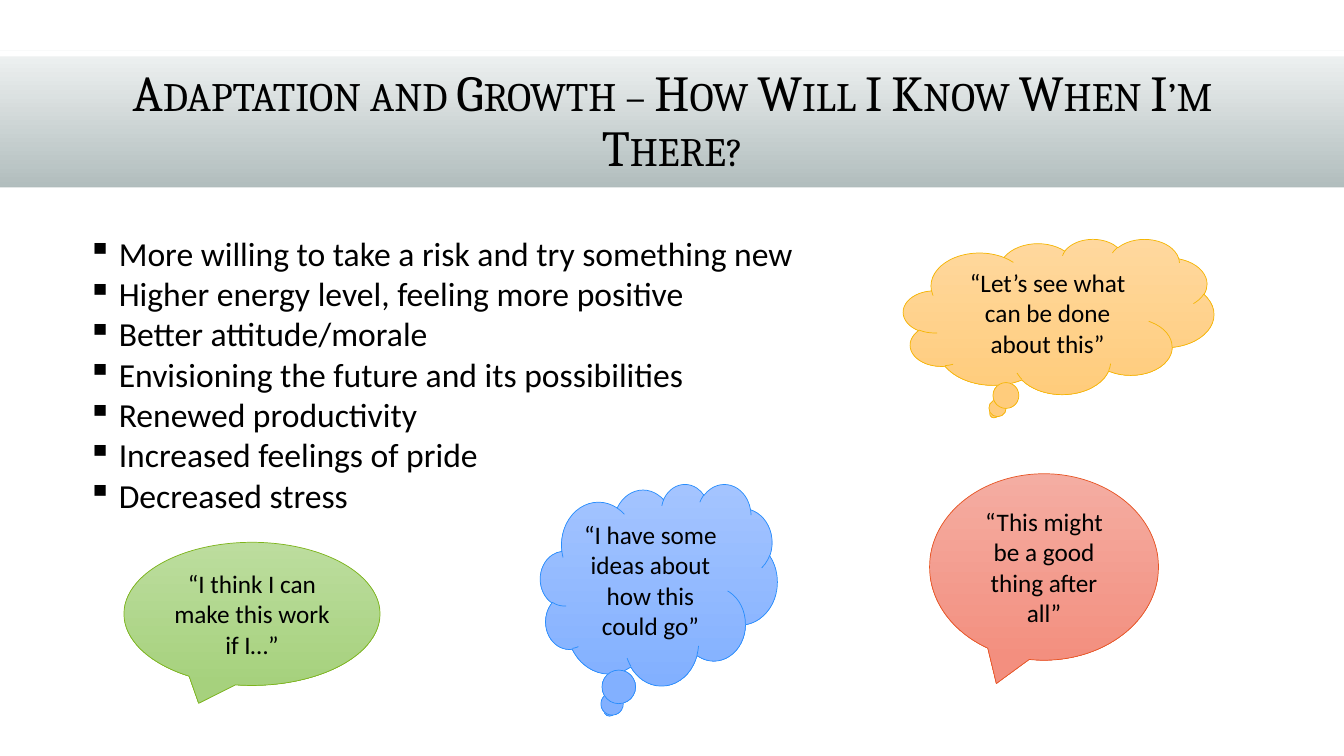
"""Build the slide on recognising adaptation and growth."""
from lxml import etree
from pptx import Presentation
from pptx.dml import color
from pptx.enum import shapes, text
from pptx.oxml import ns
from pptx import util as u

BLACK = "000000"
WHITE = "FFFFFF"
BAND_COLORS = ("EFF2F2", "B0BCBC")
TITLE = "Adaptation and Growth – How Will I Know When I’m There?"
SIGNS = (
    "More willing to take a risk and try something new",
    "Higher energy level, feeling more positive",
    "Better attitude/morale",
    "Envisioning the future and its possibilities",
    "Renewed productivity",
    "Increased feelings of pride",
    "Decreased stress",
)
SPEECH = shapes.MSO_SHAPE.OVAL_CALLOUT
THOUGHT = shapes.MSO_SHAPE.CLOUD_CALLOUT
CALLOUTS = (
    (SPEECH, (1.23, 5.38, 2.54, 1.42), ("BCDD9E", "A6D17D"), "7DB41B",
     "“I think I can make this work if I…”"),
    (THOUGHT, (8.96, 2.37, 3.08, 1.54), ("FFD89E", "FFCC7C"), "F5B605",
     "“Let’s see what can be done about this”"),
    (SPEECH, (9.22, 4.7, 2.27, 1.85), ("F4ADA2", "F38F7F"), "E75524",
     "“This might be a good thing after all”"),
    (THOUGHT, (5.36, 4.8, 2.35, 2), ("A4C4FF", "82B0FF"), "288DFC",
     "“I have some ideas about how this could go”"),
)


def rgb(value):
    """Return the colour for a hex string."""
    return color.RGBColor.from_string(value)


def inches(box):
    """Convert left, top, width and height to lengths."""
    return [u.Inches(value) for value in box]


def add_run(paragraph, words, size, font_name="Calibri"):
    """Add one black run to a paragraph and return it."""
    run = paragraph.add_run()
    run.text = words
    run.font.size = u.Pt(size)
    run.font.name = font_name
    run.font.color.rgb = rgb(BLACK)
    return run


def fill_gradient(shape, colors):
    """Fill a shape with a gradient running from top to bottom."""
    shape.fill.gradient()
    shape.fill.gradient_angle = 270
    for position, (stop, value) in enumerate(zip(shape.fill.gradient_stops, colors)):
        stop.position = position
        stop.color.rgb = rgb(value)


def add_shape(slide, kind, box):
    """Add a preset shape without a shadow."""
    shape = slide.shapes.add_shape(kind, *inches(box))
    shape.shadow.inherit = False
    return shape


def add_title_band(slide):
    """Add the shaded band with a white strip on its two edges."""
    band = add_shape(slide, shapes.MSO_SHAPE.RECTANGLE, (0, 0.5, 13.33, 1.39))
    fill_gradient(band, BAND_COLORS)
    band.line.fill.background()
    for top in (1.86, 0.5):
        strip = add_shape(slide, shapes.MSO_SHAPE.RECTANGLE, (0, top, 13.33, 0.06))
        strip.fill.solid()
        strip.fill.fore_color.rgb = rgb(WHITE)
        strip.line.fill.background()


def format_title(slide):
    """Place the title in small capitals in front of the band."""
    title = slide.shapes.title
    title.left, title.top, title.width, title.height = inches((1.17, 0.61, 11, 1.2))
    slide.shapes._spTree.append(title._element)
    frame = title.text_frame
    frame.auto_size = text.MSO_AUTO_SIZE.NONE
    frame.word_wrap = True
    frame.vertical_anchor = text.MSO_ANCHOR.BOTTOM
    paragraph = frame.paragraphs[0]
    paragraph.alignment = text.PP_ALIGN.CENTER
    paragraph.line_spacing = 0.9
    run = add_run(paragraph, TITLE, 36, "Cambria")
    run.font._element.set("cap", "small")


def add_bullet(paragraph):
    """Give a paragraph a square bullet with a hanging indent."""
    properties = paragraph._p.get_or_add_pPr()
    indent = u.Inches(0.31)
    properties.set("marL", str(indent))
    properties.set("indent", str(-indent))
    etree.SubElement(properties, ns.qn("a:buChar"), char="▪")


def add_bullet_list(slide, box, items):
    """Add a text box with one bullet per item."""
    frame = slide.shapes.add_textbox(*inches(box)).text_frame
    frame.word_wrap = True
    frame.auto_size = text.MSO_AUTO_SIZE.SHAPE_TO_FIT_TEXT
    for index, item in enumerate(items):
        paragraph = frame.add_paragraph() if index else frame.paragraphs[0]
        add_bullet(paragraph)
        add_run(paragraph, item, 24)


def add_callout(slide, kind, box, colors, line_color, words):
    """Add a speech or thought bubble with centred words."""
    callout = add_shape(slide, kind, box)
    fill_gradient(callout, colors)
    callout.line.color.rgb = rgb(line_color)
    callout.line.width = u.Pt(0.5)
    frame = callout.text_frame
    frame.word_wrap = True
    frame.auto_size = text.MSO_AUTO_SIZE.SHAPE_TO_FIT_TEXT
    frame.vertical_anchor = text.MSO_ANCHOR.MIDDLE
    paragraph = frame.paragraphs[0]
    paragraph.alignment = text.PP_ALIGN.CENTER
    add_run(paragraph, words, 18)


def main():
    """Build and save the presentation."""
    presentation = Presentation()
    presentation.slide_width = u.Inches(13.33)
    presentation.slide_height = u.Inches(7.5)
    slide = presentation.slides.add_slide(presentation.slide_layouts[5])
    add_title_band(slide)
    format_title(slide)
    add_bullet_list(slide, (0.77, 2.26, 9.59, 2.93), SIGNS)
    for callout in CALLOUTS:
        add_callout(slide, *callout)
    presentation.save("out.pptx")


if __name__ == "__main__":
    main()
